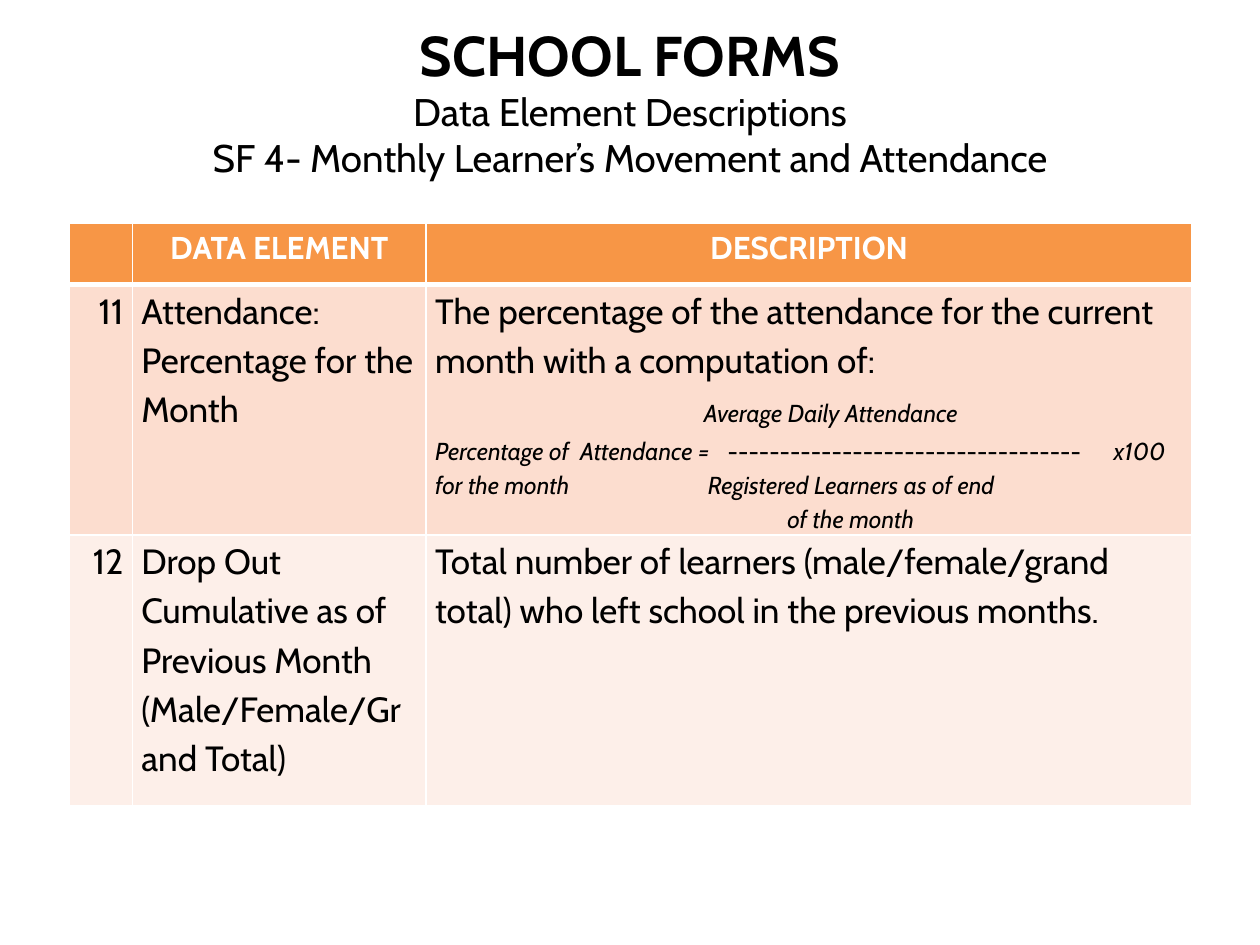
from lxml import etree
from pptx import Presentation
from pptx import util as u
from pptx.dml.color import RGBColor
from pptx.enum import text
from pptx.oxml import ns

ORANGE, PEACH, CREAM = "F79646", "FCDDCF", "FDEFE9"
BLACK, WHITE = "000000", "FFFFFF"
LEFT, CENTER, RIGHT = text.PP_ALIGN.LEFT, text.PP_ALIGN.CENTER, text.PP_ALIGN.RIGHT


def color(value):
    return RGBColor.from_string(value)


def child(parent, tag, **attributes):
    return etree.SubElement(parent, ns.qn(tag), attributes)


class FormSlide:
    font = "Cabin"
    line_spacing = 1.15

    def __init__(self, deck):
        self.slide = deck.slides.add_slide(deck.slide_layouts[5])

    def run(self, paragraph, words, size, ink=BLACK, bold=False, italic=False):
        run = paragraph.add_run()
        run.text = words
        run.font.name, run.font.size = self.font, u.Pt(size)
        run.font.bold, run.font.italic = bold, italic
        run.font.color.rgb = color(ink)

    def title(self, heading, sublines, left, top, width, height):
        title = self.slide.shapes.title
        title.left, title.top = u.Cm(left), u.Cm(top)
        title.width, title.height = u.Cm(width), u.Cm(height)
        frame = title.text_frame
        frame.word_wrap = True
        frame.auto_size = text.MSO_AUTO_SIZE.NONE
        frame.vertical_anchor = text.MSO_ANCHOR.MIDDLE
        paragraph = frame.paragraphs[0]
        paragraph.alignment = CENTER
        self.run(paragraph, heading, 32, bold=True)
        for subline in sublines:
            paragraph.add_line_break()
            self.run(paragraph, subline, 22)

    def table(self, left, top, widths, heights):
        table = self.slide.shapes.add_table(
            len(heights), len(widths), u.Cm(left), u.Cm(top),
            u.Cm(sum(widths)), u.Cm(sum(heights))).table
        for column, width in zip(table.columns, widths):
            column.width = u.Cm(width)
        for row, height in zip(table.rows, heights):
            row.height = u.Cm(height)
        return table

    def cell(self, cell, fill, bottom=1, top=1):
        """Set the cell's insets, white borders and fill."""
        cell.margin_left = cell.margin_right = u.Cm(0.18)
        cell.margin_top = cell.margin_bottom = 0
        properties = cell._tc.get_or_add_tcPr()
        for side, points in zip("LRTB", (1, 1, top, bottom)):
            line = child(properties, f"a:ln{side}", w=str(u.Pt(points)))
            child(child(line, "a:solidFill"), "a:srgbClr", val=WHITE)
        cell.fill.solid()
        cell.fill.fore_color.rgb = color(fill)

    def paragraph(self, cell, lines, size, align=LEFT, tabs=(), before=0, **style):
        frame = cell.text_frame
        paragraph = frame.paragraphs[0]
        if paragraph.runs:
            paragraph = frame.add_paragraph()
        if tabs:
            stops = child(paragraph._p.get_or_add_pPr(), "a:tabLst")
            for stop in tabs:
                child(stops, "a:tab", pos=str(u.Cm(stop)), algn="l")
        paragraph.alignment = align
        paragraph.line_spacing = self.line_spacing
        if before:
            paragraph.space_before = u.Pt(before)
        for number, line in enumerate(lines.split("\n")):
            if number:
                paragraph.add_line_break()
            self.run(paragraph, line, size, **style)
        return paragraph


def main():
    deck = Presentation()
    deck.slide_width, deck.slide_height = u.Cm(25.4), u.Cm(19.05)
    form = FormSlide(deck)
    form.title("SCHOOL FORMS",
               ["Data Element Descriptions",
                "SF 4- Monthly Learner’s Movement and Attendance"],
               1.27, 0.43, 22.86, 3.18)

    headers = ["", "DATA ELEMENT", "DESCRIPTION"]
    elements = [
        ("11", "Attendance: Percentage for the Month",
         "The percentage of the attendance for the current month "
         "with a computation of:", PEACH),
        ("12", "Drop Out\nCumulative as of Previous Month (Male/Female/Grand Total)",
         "Total number of learners (male/female/grand total) "
         "who left school in the previous months.", CREAM),
    ]
    table = form.table(1.4, 4.5, [1.27, 5.92, 15.44], [1.24, 5, 5.46])

    for column, header in enumerate(headers):
        cell = table.cell(0, column)
        form.cell(cell, ORANGE, bottom=3)
        if header:
            form.paragraph(cell, header, 18, CENTER, ink=WHITE, bold=True)

    for row, (*entries, fill) in enumerate(elements, start=1):
        for column, entry in enumerate(entries):
            cell = table.cell(row, column)
            form.cell(cell, fill, top=3 if row == 1 else 1)
            form.paragraph(cell, entry, 20, LEFT if column else RIGHT)

    formula = table.cell(1, 2)
    form.paragraph(formula, "\tAverage Daily Attendance", 14,
                   tabs=[5.42], before=6.5, italic=True)
    fraction = form.paragraph(formula, "Percentage of  Attendance =\t", 14,
                              tabs=[5.9, 13.68], before=2, italic=True)
    form.run(fraction, "-" * 34 + "\t", 14)
    form.run(fraction, "x100", 14, italic=True)
    form.paragraph(formula, "for the month\tRegistered Learners as of end", 14,
                   tabs=[5.5], italic=True)
    form.paragraph(formula, "\tof the month", 14, tabs=[7.1], italic=True)

    deck.save("out.pptx")


if __name__ == "__main__":
    main()
